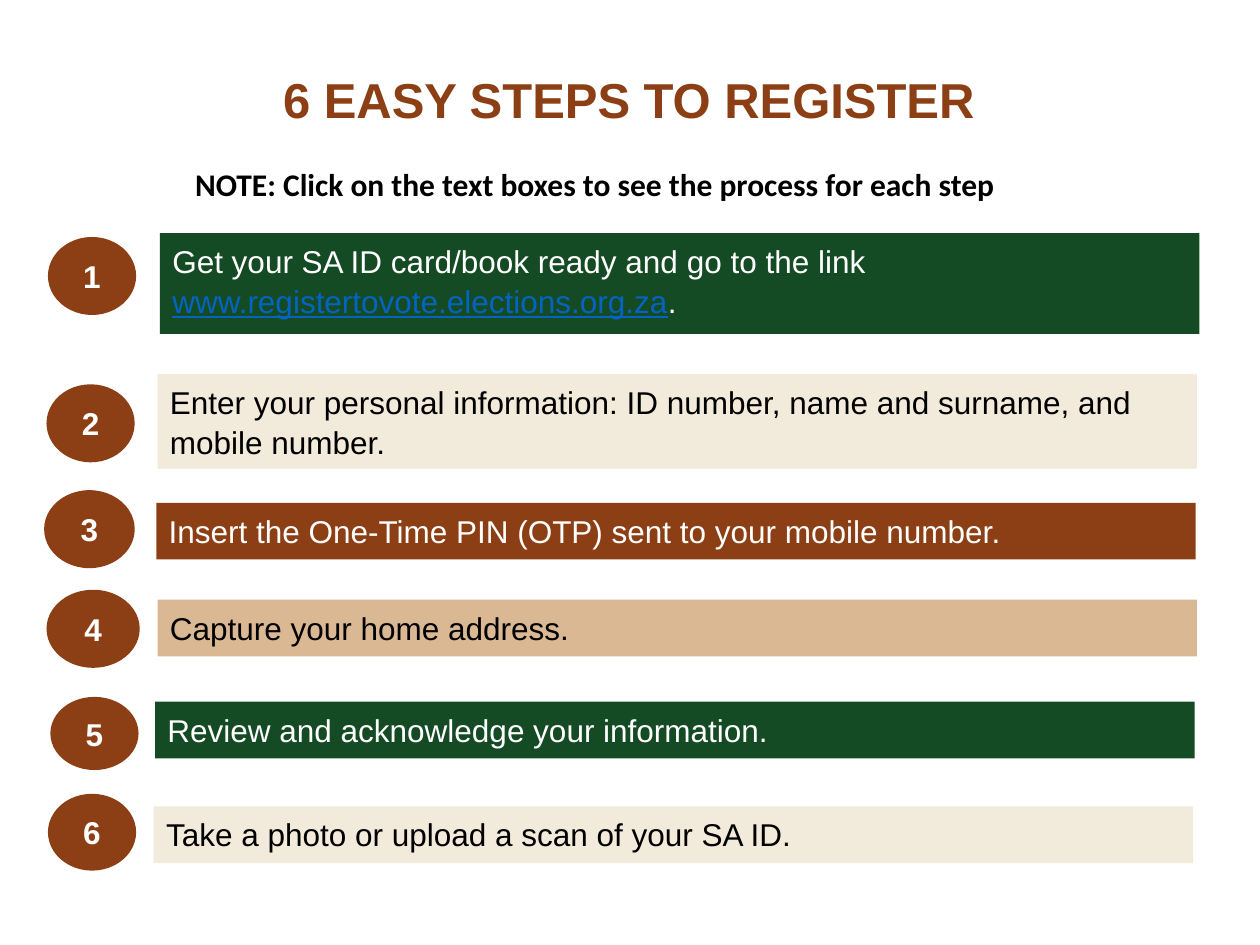
import pptx
import pptx.dml.color
import pptx.enum.shapes
import pptx.enum.text
import pptx.util

Pt = pptx.util.Pt
RGBColor = pptx.dml.color.RGBColor
MSO_SHAPE = pptx.enum.shapes.MSO_SHAPE
PP_ALIGN = pptx.enum.text.PP_ALIGN
MSO_ANCHOR = pptx.enum.text.MSO_ANCHOR

BROWN = RGBColor(0x8C, 0x3F, 0x15)
GREEN = RGBColor(0x15, 0x4B, 0x24)
CREAM = RGBColor(0xF2, 0xEA, 0xDB)
TAN = RGBColor(0xDB, 0xB8, 0x94)
LINK_BLUE = RGBColor(0x05, 0x63, 0xC1)
WHITE = RGBColor(0xFF, 0xFF, 0xFF)
BLACK = RGBColor(0, 0, 0)

BAR_WIDTH = 594
LINK = "www.registertovote.elections.org.za"

STEPS = [
    (["Get your SA ID card/book ready and go to the link ", LINK, "."],
     GREEN, WHITE, (27.4, 135.4, 50.4, 44.6), (91.4, 133.2, 57.6)),
    (["Enter your personal information: ID number, name and surname, and mobile number."],
     CREAM, BLACK, (26.6, 219.6, 50.4, 44.6), (90, 213.8, 54)),
    (["Insert the One-Time PIN (OTP) sent to your mobile number."],
     BROWN, WHITE, (25.2, 280.1, 51.8, 44.6), (89.3, 287.3, 32.4)),
    (["Capture your home address."],
     TAN, BLACK, (26.6, 337, 53.3, 44.6), (90, 342.7, 32.4)),
    (["Review and acknowledge your information."],
     GREEN, WHITE, (28.8, 398.2, 50.4, 41.8), (88.6, 401, 32.4)),
    (["Take a photo or upload a scan of your SA ID."],
     CREAM, BLACK, (27.4, 453.6, 50.4, 43.9), (87.8, 460.8, 32.4)),
]


def style_run(run, size, color, bold=False, font="Arial"):
    run.font.name = font
    run.font.size = Pt(size)
    run.font.bold = bold
    run.font.color.rgb = color


def add_title(slide, text):
    title = slide.shapes.title
    title.left, title.top, title.width, title.height = Pt(49), Pt(34.6), Pt(620.6), Pt(48.2)
    title.text_frame.text = text
    title.text_frame.vertical_anchor = MSO_ANCHOR.MIDDLE
    heading = title.text_frame.paragraphs[0]
    heading.alignment = PP_ALIGN.CENTER
    heading.line_spacing = 0.9
    style_run(heading.runs[0], 28, BROWN, bold=True)


def add_note(slide, text):
    note = slide.shapes.add_textbox(Pt(104.4), Pt(90.7), Pt(509), Pt(28.8))
    note.text_frame.word_wrap = True
    note.text_frame.text = text
    style_run(note.text_frame.paragraphs[0].runs[0], 18, BLACK, bold=True, font="Calibri")


def add_filled_shape(slide, preset, box, fill):
    shape = slide.shapes.add_shape(preset, *(Pt(length) for length in box))
    shape.shadow.inherit = False
    shape.fill.solid()
    shape.fill.fore_color.rgb = fill
    shape.line.fill.background()
    return shape


def add_number(slide, number, box):
    badge = add_filled_shape(slide, MSO_SHAPE.OVAL, box, BROWN)
    badge.text_frame.text = str(number)
    badge.text_frame.vertical_anchor = MSO_ANCHOR.MIDDLE
    label = badge.text_frame.paragraphs[0]
    label.alignment = PP_ALIGN.CENTER
    style_run(label.runs[0], 18, WHITE, bold=True)


def add_instruction(slide, pieces, fill, color, left, top, height):
    bar = add_filled_shape(slide, MSO_SHAPE.RECTANGLE, (left, top, BAR_WIDTH, height), fill)
    bar.text_frame.word_wrap = True
    bar.text_frame.vertical_anchor = MSO_ANCHOR.TOP
    instruction = bar.text_frame.paragraphs[0]
    instruction.alignment = PP_ALIGN.LEFT
    instruction.line_spacing = 1.07
    for piece in pieces:
        run = instruction.add_run()
        run.text = piece
        is_link = piece == LINK
        style_run(run, 18, LINK_BLUE if is_link else color)
        run.font.underline = is_link


def main():
    presentation = pptx.Presentation()
    presentation.slide_width = Pt(720)
    presentation.slide_height = Pt(540)
    slide = presentation.slides.add_slide(presentation.slide_layouts[5])
    add_title(slide, "6 EASY STEPS TO REGISTER")
    add_note(slide, "NOTE: Click on the text boxes to see the process for each step")
    for number, (pieces, fill, color, badge_box, bar_box) in enumerate(STEPS, start=1):
        add_number(slide, number, badge_box)
        add_instruction(slide, pieces, fill, color, *bar_box)
    presentation.save("out.pptx")


if __name__ == "__main__":
    main()
